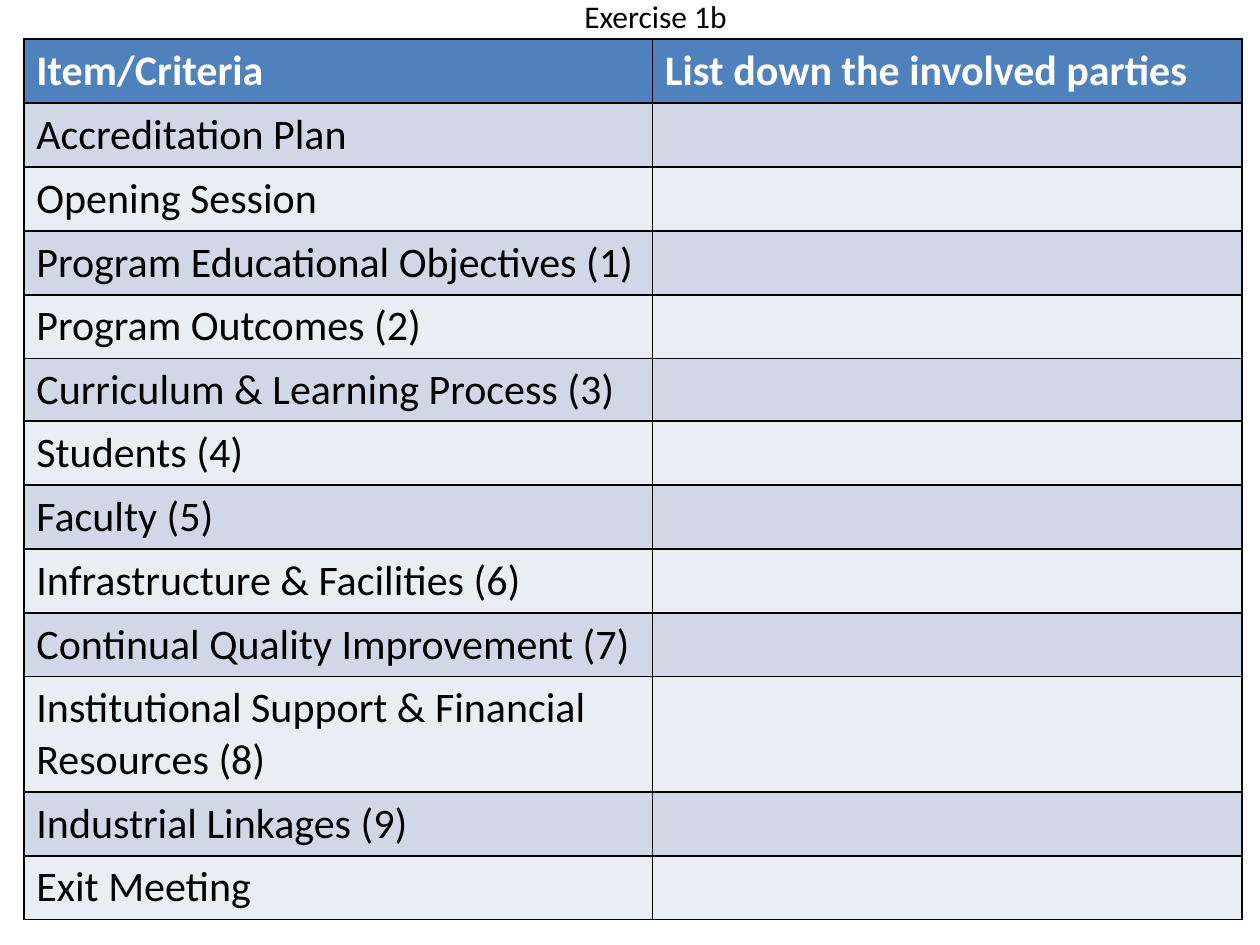
from dataclasses import dataclass

from lxml import etree
from pptx import Presentation, util as u
from pptx.dml.color import RGBColor
from pptx.enum import text
from pptx.oxml import ns

COLORS = {
    "header": "4F81BD",
    "dark_band": "D0D8E8",
    "light_band": "E9EDF4",
    "white": "FFFFFF",
    "black": "000000",
}
FONT = "Calibri"
TABLE_LEFT = 0.48
COLUMN_WIDTHS = (12.67, 11.89)
ROW_HEIGHT = 1.28
TALL_ROW_HEIGHT = 2.31


@dataclass
class Row:
    label: str
    fill: str
    note: str = ""
    ink: str = "black"
    bold: bool = False
    height: float = ROW_HEIGHT


@dataclass
class CriteriaTable:
    top: float
    rows: list[Row]


DARK, LIGHT = "dark_band", "light_band"
TABLES = [
    CriteriaTable(0.79, [
        Row("Item/Criteria", "header", "List down the involved parties", "white", True),
        Row("Accreditation Plan", DARK),
        Row("Opening Session", LIGHT),
        Row("Program Educational Objectives (1)", DARK),
        Row("Program Outcomes (2)", LIGHT),
        Row("Curriculum & Learning Process (3)", DARK),
    ]),
    CriteriaTable(8.49, [
        Row("Students (4)", LIGHT),
        Row("Faculty (5)", DARK),
        Row("Infrastructure & Facilities (6)", LIGHT),
        Row("Continual Quality Improvement (7)", DARK),
        Row("Institutional Support & Financial Resources (8)", LIGHT,
            height=TALL_ROW_HEIGHT),
        Row("Industrial Linkages (9)", DARK),
        Row("Exit Meeting", LIGHT),
    ]),
]


def color(name: str) -> RGBColor:
    return RGBColor.from_string(COLORS[name])


def style_font(font, size: float, ink: str, bold: bool = False) -> None:
    font.name = FONT
    font.size = u.Pt(size)
    font.bold = bold
    font.color.rgb = color(ink)


def add_borders(cell) -> None:
    """Draw a 1 pt line on each side; the lines must precede the cell's fill."""
    properties = cell._tc.get_or_add_tcPr()
    for index, side in enumerate(("lnL", "lnR", "lnT", "lnB")):
        line = etree.Element(ns.qn(f"a:{side}"), w=str(u.Pt(1)))
        fill = etree.SubElement(line, ns.qn("a:solidFill"))
        etree.SubElement(fill, ns.qn("a:srgbClr"), val=COLORS["black"])
        properties.insert(index, line)


def fill_cell(cell, wording: str, row: Row) -> None:
    cell.fill.solid()
    cell.fill.fore_color.rgb = color(row.fill)
    add_borders(cell)
    para = cell.text_frame.paragraphs[0]
    para.text = wording
    style_font(para.font, 24, row.ink, row.bold)
    for span in para.runs:
        style_font(span.font, 24, row.ink, row.bold)


def add_criteria_table(page, criteria: CriteriaTable) -> None:
    height = sum(row.height for row in criteria.rows)
    table = page.shapes.add_table(
        len(criteria.rows), len(COLUMN_WIDTHS), u.Cm(TABLE_LEFT), u.Cm(criteria.top),
        u.Cm(sum(COLUMN_WIDTHS)), u.Cm(height)).table
    table.first_row = table.horz_banding = False
    for column, width in zip(table.columns, COLUMN_WIDTHS):
        column.width = u.Cm(width)
    for index, row in enumerate(criteria.rows):
        table.rows[index].height = u.Cm(row.height)
        for column, wording in enumerate((row.label, row.note)):
            fill_cell(table.cell(index, column), wording, row)


def add_title(page) -> None:
    box = page.shapes.add_textbox(u.Cm(11.53), u.Cm(-0.18), u.Cm(3.43), u.Cm(1.02))
    frame = box.text_frame
    frame.word_wrap = False
    frame.auto_size = text.MSO_AUTO_SIZE.SHAPE_TO_FIT_TEXT
    frame.text = "Exercise 1b"
    style_font(frame.paragraphs[0].runs[0].font, 18, "black")


def main() -> None:
    deck = Presentation()
    deck.slide_width, deck.slide_height = u.Cm(25.4), u.Cm(19.05)
    page = deck.slides.add_slide(deck.slide_layouts[6])
    for criteria in TABLES:
        add_criteria_table(page, criteria)
    add_title(page)
    deck.save("out.pptx")


if __name__ == "__main__":
    main()
